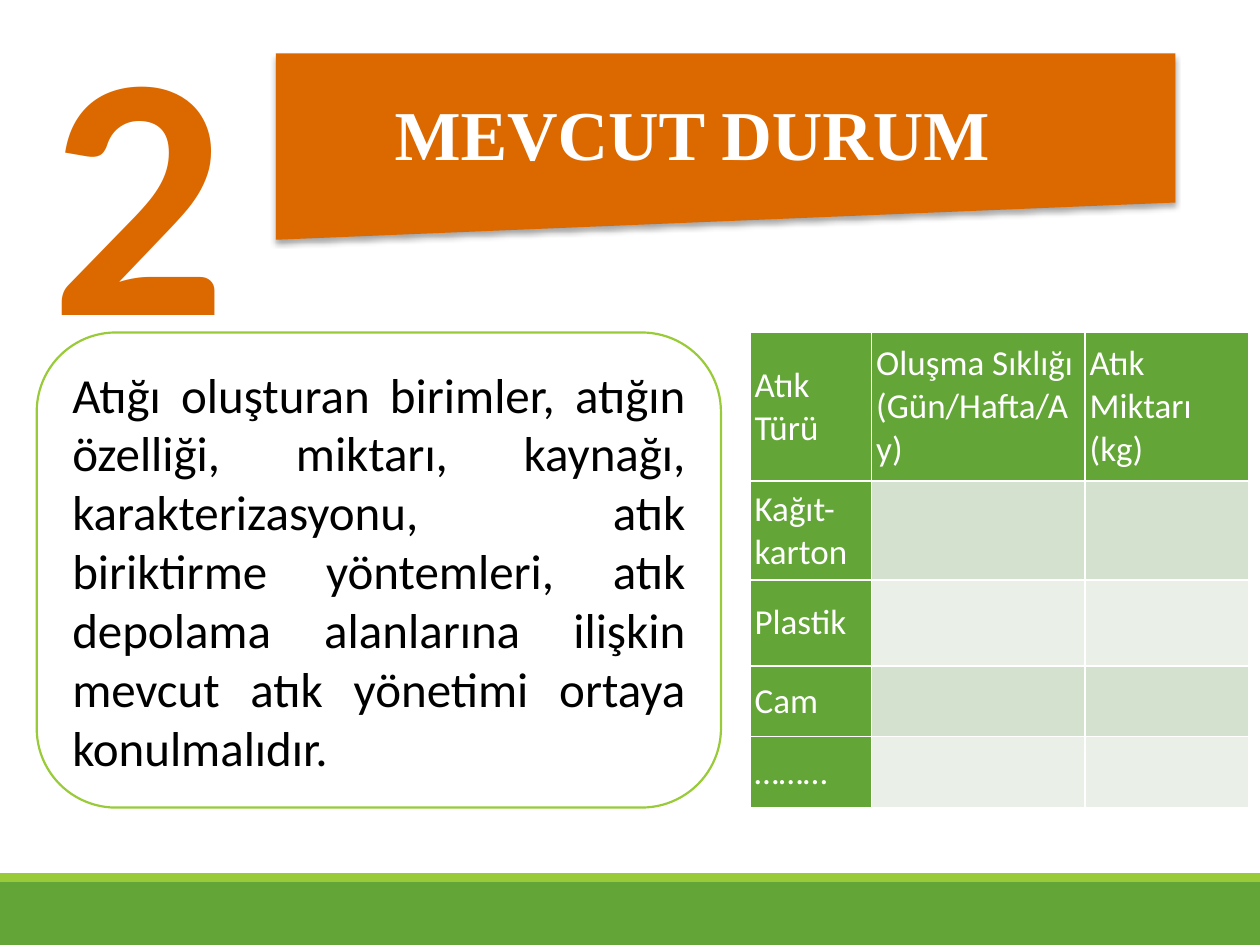
"""Build the slide on the current state of waste, with a banner, a note and a table."""
from lxml.etree import SubElement
from pptx import Presentation
from pptx.dml.color import RGBColor
from pptx.enum.shapes import MSO_SHAPE
from pptx.enum.text import MSO_ANCHOR, PP_ALIGN
from pptx.oxml import parse_xml
from pptx.oxml.ns import nsdecls, qn
from pptx.util import Pt

COLORS = {
    "green": "63A537", "lime": "99CB38", "orange": "DC6800", "white": "FFFFFF",
    "black": "000000", "dark band": "D3E1CE", "light band": "EAF0E8",
}


def add_block(kind, left, top, width, height, color):
    block = page.shapes.add_shape(kind, Pt(left), Pt(top), Pt(width), Pt(height))
    block.shadow.inherit = False
    block.fill.solid()
    block.fill.fore_color.rgb = RGBColor.from_string(COLORS[color])
    block.line.fill.background()
    return block


def add_span(para, text, size, color, font="Calibri", bold=False):
    span = para.add_run()
    span.text = text
    span.font.size = Pt(size)
    span.font.name = font
    span.font.bold = bold
    span.font.color.rgb = RGBColor.from_string(COLORS[color])


deck = Presentation()
deck.slide_width, deck.slide_height = Pt(720), Pt(540)
page = deck.slides.add_slide(deck.slide_layouts[5])

add_block(MSO_SHAPE.RECTANGLE, 0, 504, 720, 36, "green")
add_block(MSO_SHAPE.RECTANGLE, 0, 499, 720, 5, "lime")

banner = add_block(MSO_SHAPE.FLOWCHART_MANUAL_INPUT, 157.7, 30.5, 514, 106.5, "orange")
banner.rotation = 180
effects = banner.element.spPr.find(qn("a:effectLst"))
effects.append(parse_xml(
    f'<a:outerShdw {nsdecls("a")} blurRad="{Pt(3.1)}" dist="{Pt(1.8)}" dir="5400000" '
    f'rotWithShape="0"><a:srgbClr val="{COLORS["black"]}"><a:alpha val="35000"/>'
    '</a:srgbClr></a:outerShdw>'))

title = page.shapes.title
title.left, title.top, title.width, title.height = Pt(177), Pt(50), Pt(437), Pt(57)
frame = title.text_frame
frame.margin_top = frame.margin_bottom = 0
frame.vertical_anchor = MSO_ANCHOR.MIDDLE
para = frame.paragraphs[0]
para.alignment = PP_ALIGN.CENTER
para.line_spacing = 0.9
add_span(para, "MEVCUT DURUM", 40, "white", "Times New Roman", True)
title.element.getparent().append(title.element)

number = page.shapes.add_textbox(Pt(20.9), Pt(-22.3), Pt(116.6), Pt(248.4))
number.text_frame.word_wrap = False
para = number.text_frame.paragraphs[0]
para.alignment = PP_ALIGN.CENTER
add_span(para, "2", 199, "orange", bold=True)

note = add_block(MSO_SHAPE.ROUNDED_RECTANGLE, 21, 190, 391, 271.5, "white")
note.line.color.rgb = RGBColor.from_string(COLORS["lime"])
note.line.width = Pt(1.25)
note.text_frame.word_wrap = True
note.text_frame.vertical_anchor = MSO_ANCHOR.MIDDLE
para = note.text_frame.paragraphs[0]
para.alignment = PP_ALIGN.JUSTIFY
add_span(para, "Atığı oluşturan birimler, atığın özelliği, miktarı, kaynağı, "
         "karakterizasyonu, atık biriktirme yöntemleri, atık depolama alanlarına "
         "ilişkin mevcut atık yönetimi ortaya konulmalıdır.", 28, "black")

rows = [
    ["Atık Türü", "Oluşma Sıklığı (Gün/Hafta/Ay)", "Atık Miktarı (kg)"],
    ["Kağıt-karton", "", ""],
    ["Plastik", "", ""],
    ["Cam", "", ""],
    ["………", "", ""],
]
table = page.shapes.add_table(5, 3, Pt(428.5), Pt(190), Pt(285), Pt(271.5)).table
for column, width in zip(table.columns, [69.5, 122, 93.5]):
    column.width = Pt(width)
for row, height in zip(table.rows, [85, 56.5, 49, 40.5, 40.5]):
    row.height = Pt(height)

for row_index, texts in enumerate(rows):
    for column_index, text in enumerate(texts):
        cell = table.cell(row_index, column_index)
        properties = cell._tc.get_or_add_tcPr()
        for side in ("lnL", "lnR", "lnT", "lnB"):
            border = SubElement(properties, qn(f"a:{side}"), w=str(Pt(1)))
            fill = SubElement(border, qn("a:solidFill"))
            SubElement(fill, qn("a:srgbClr"), val=COLORS["white"])
        band = "dark band" if row_index % 2 else "light band"
        color = "green" if row_index == 0 or column_index == 0 else band
        cell.fill.solid()
        cell.fill.fore_color.rgb = RGBColor.from_string(COLORS[color])
        if text:
            cell.vertical_anchor = MSO_ANCHOR.MIDDLE
            cell.margin_left = cell.margin_right = Pt(2.7)
            cell.margin_top = cell.margin_bottom = 0
            add_span(cell.text_frame.paragraphs[0], text, 20, "white")

deck.save("out.pptx")
